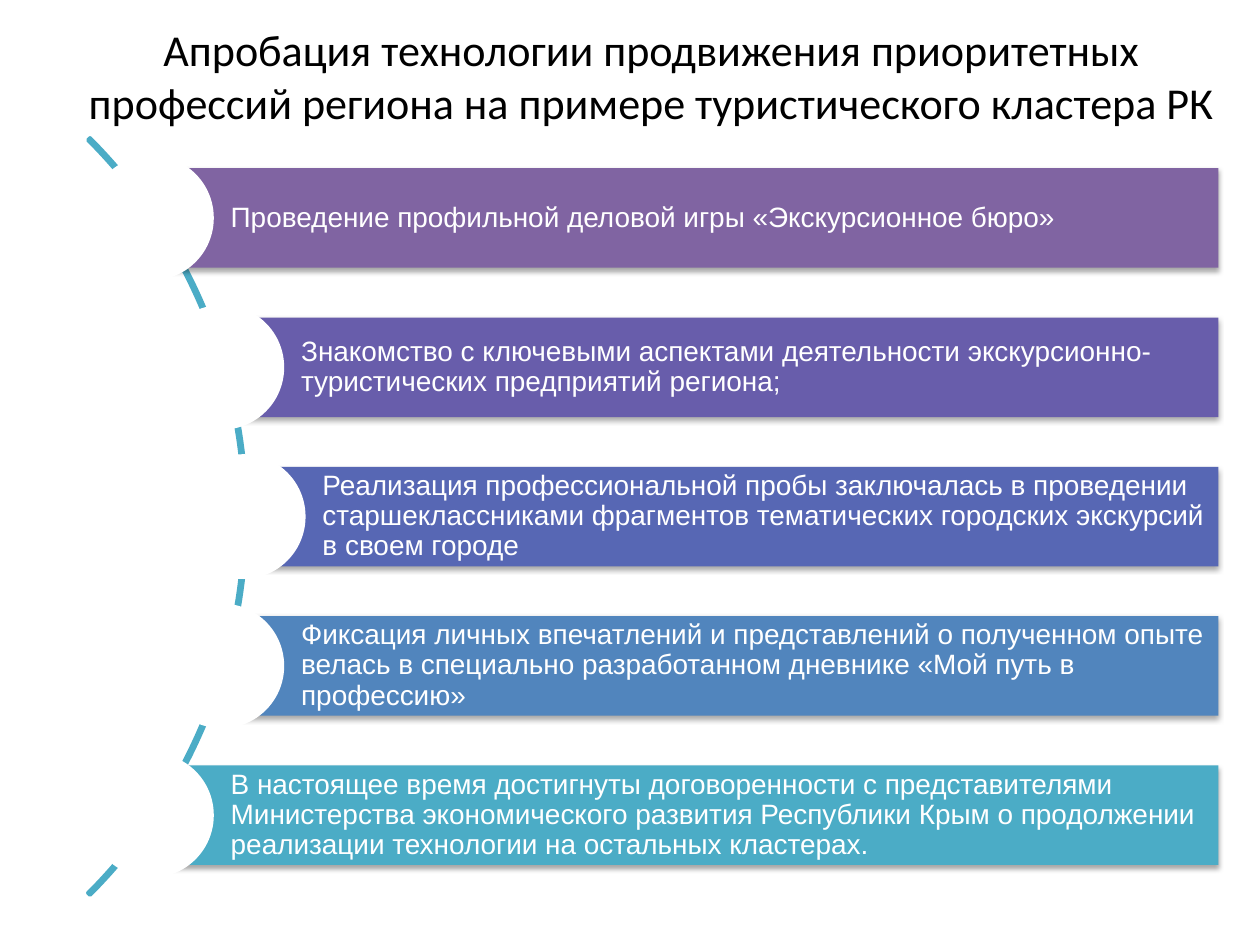
"""Build a slide with a curved list of five steps along an arc."""
from math import sqrt

from lxml.etree import SubElement
from pptx import Presentation
from pptx.dml.color import RGBColor
from pptx.enum.shapes import MSO_SHAPE
from pptx.enum.text import MSO_ANCHOR, MSO_AUTO_SIZE, PP_ALIGN
from pptx.oxml.ns import qn
from pptx.util import Inches, Pt

TITLE = "Апробация технологии продвижения приоритетных профессий региона на примере туристического кластера РК"
STEPS = [
    ("Проведение профильной деловой игры «Экскурсионное бюро»", "8064A2"),
    ("Знакомство с ключевыми аспектами деятельности экскурсионно-туристических предприятий региона;", "685DAB"),
    ("Реализация профессиональной пробы заключалась в проведении старшеклассниками фрагментов "
     "тематических городских экскурсий в своем городе", "5767B4"),
    ("Фиксация личных впечатлений и представлений о полученном опыте велась в специально "
     "разработанном дневнике «Мой путь в профессию»", "5185BD"),
    ("В настоящее время достигнуты договоренности с представителями Министерства экономического "
     "развития Республики Крым о продолжении реализации технологии на остальных кластерах.", "4BACC6"),
]
THEME = {
    "title": {"name": "Calibri", "size": Pt(25.2), "color": "000000"},
    "step": {"name": "Arial", "size": Pt(16), "color": "FFFFFF"},
    "arc": "4BACC6", "circle": "FFFFFF", "shadow": "000000",
}
CENTER_X, CENTER_Y = -2.29, 4.1
ARC_SIZE, INNER_RADIUS = 8.5, 4.22
BAR_RIGHT, BAR_HEIGHT, BAR_PITCH = 9.67, 0.79, 1.185
CIRCLE_SIZE = 0.99


def write_text(shape, text, style, alignment, line_spacing, margins):
    frame = shape.text_frame
    format_values = dict(margins, word_wrap=True, auto_size=MSO_AUTO_SIZE.NONE,
                         vertical_anchor=MSO_ANCHOR.MIDDLE)
    for name, value in format_values.items():
        setattr(frame, name, value)
    paragraph = frame.paragraphs[0]
    paragraph.alignment = alignment
    paragraph.line_spacing = line_spacing
    run = paragraph.add_run()
    run.text = text
    run.font.name, run.font.size = style["name"], style["size"]
    run.font.color.rgb = RGBColor.from_string(style["color"])


def add_shape(slide, kind, left, top, width, height, color):
    shape = slide.shapes.add_shape(kind, Inches(left), Inches(top), Inches(width), Inches(height))
    shape.shadow.inherit = False
    shape.fill.solid()
    shape.fill.fore_color.rgb = RGBColor.from_string(color)
    shape.line.fill.background()
    return shape


def add_shadow(shape):
    effects = shape.element.spPr.find(qn("a:effectLst"))
    shadow = SubElement(effects, qn("a:outerShdw"), blurRad=str(Pt(3.1)), dist=str(Pt(1.8)),
                        dir="5400000", rotWithShape="0")
    color = SubElement(shadow, qn("a:srgbClr"), val=THEME["shadow"])
    SubElement(color, qn("a:alpha"), val="35000")


def add_arc(slide):
    arc = add_shape(slide, MSO_SHAPE.BLOCK_ARC, CENTER_X - ARC_SIZE / 2, CENTER_Y - ARC_SIZE / 2,
                    ARC_SIZE, ARC_SIZE, THEME["arc"])
    for index, value in enumerate((189, 27, 0.003)):
        arc.adjustments[index] = value
    arc.line.color.rgb = RGBColor.from_string(THEME["arc"])
    arc.line.width = Pt(2)


def add_step(slide, index, text, color):
    offset = (index - (len(STEPS) - 1) / 2) * BAR_PITCH
    middle = CENTER_Y + offset
    left = CENTER_X + sqrt(INNER_RADIUS ** 2 - offset ** 2)
    bar = add_shape(slide, MSO_SHAPE.RECTANGLE, left, middle - BAR_HEIGHT / 2,
                    BAR_RIGHT - left, BAR_HEIGHT, color)
    add_shadow(bar)
    margins = {f"margin_{side}": Inches(0.04) for side in ("top", "right", "bottom")}
    margins["margin_left"] = Inches(0.63)
    write_text(bar, text, THEME["step"], PP_ALIGN.LEFT, 0.9, margins)
    add_shape(slide, MSO_SHAPE.OVAL, left - CIRCLE_SIZE / 2, middle - CIRCLE_SIZE / 2,
              CIRCLE_SIZE, CIRCLE_SIZE, THEME["circle"])


def main():
    presentation = Presentation()
    presentation.slide_width, presentation.slide_height = Inches(10), Inches(7.5)
    slide = presentation.slides.add_slide(presentation.slide_layouts[5])
    title = slide.shapes.title
    title.left, title.top, title.width, title.height = map(Inches, (0.51, 0, 9.32, 1.19))
    write_text(title, TITLE, THEME["title"], PP_ALIGN.CENTER, 1.0, {})
    add_arc(slide)
    for index, (text, color) in enumerate(STEPS):
        add_step(slide, index, text, color)
    presentation.save("out.pptx")


if __name__ == "__main__":
    main()
